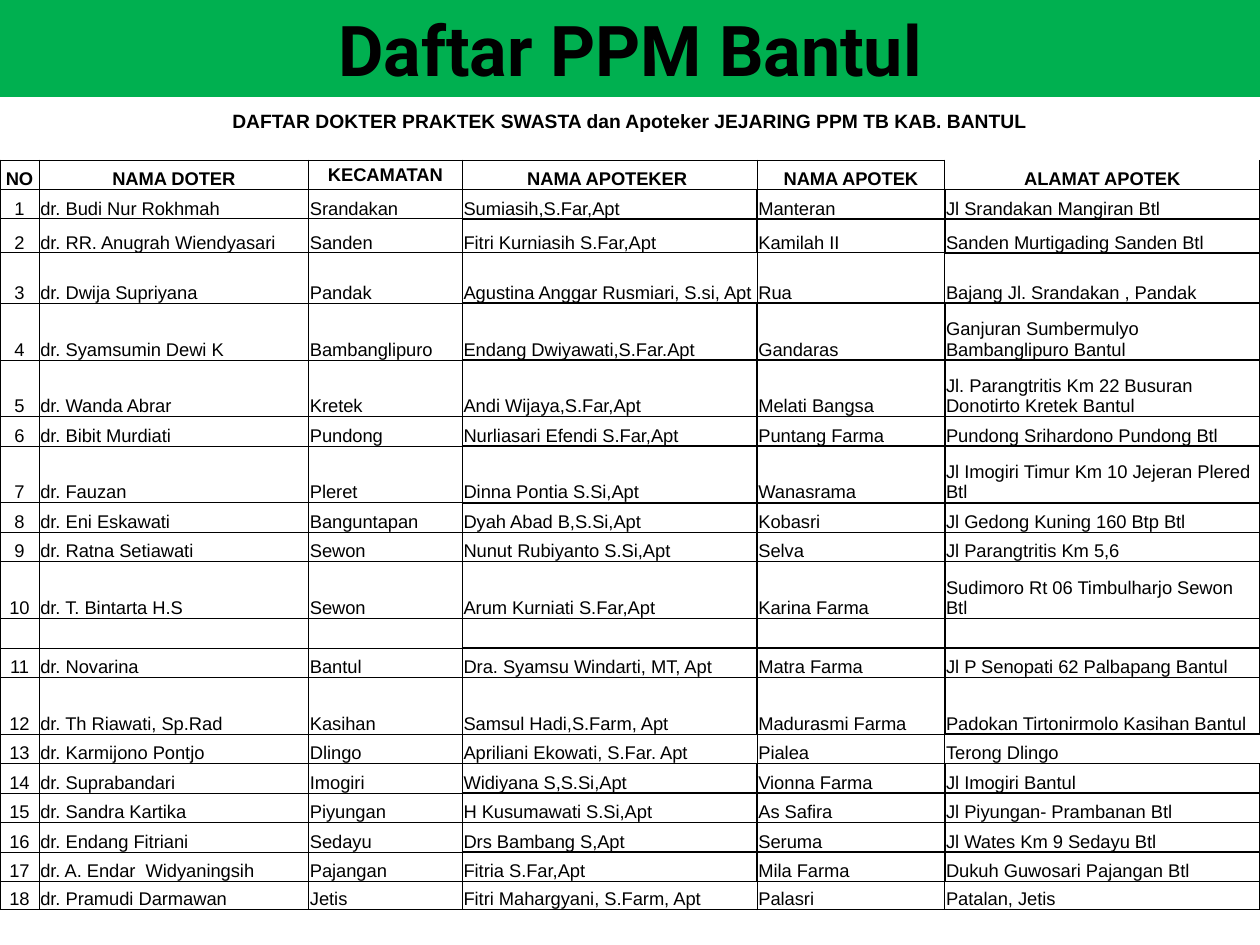
from lxml import etree
from pptx import Presentation
from pptx import util as u
from pptx.dml.color import RGBColor
from pptx.enum import shapes, text
from pptx.oxml.ns import qn

GREEN = RGBColor(0x00, 0xB0, 0x50)
BLACK = RGBColor(0x00, 0x00, 0x00)

SUBTITLE = "DAFTAR DOKTER PRAKTEK SWASTA dan Apoteker JEJARING PPM TB KAB. BANTUL"
HEADINGS = ["NO", "NAMA DOTER", "KECAMATAN", "NAMA APOTEKER ", "NAMA APOTEK", "ALAMAT APOTEK"]
DOCTORS = [
    ["1", "dr. Budi Nur Rokhmah", "Srandakan", "Sumiasih,S.Far,Apt", "Manteran",
     "Jl Srandakan Mangiran Btl"],
    ["2", "dr. RR. Anugrah Wiendyasari", "Sanden", "Fitri Kurniasih S.Far,Apt", "Kamilah II",
     "Sanden Murtigading Sanden Btl"],
    ["3", "dr. Dwija Supriyana", "Pandak", "Agustina Anggar Rusmiari, S.si, Apt", "Rua",
     "Bajang Jl. Srandakan , Pandak"],
    ["4", "dr. Syamsumin Dewi K", "Bambanglipuro", "Endang Dwiyawati,S.Far.Apt", "Gandaras",
     "Ganjuran Sumbermulyo Bambanglipuro Bantul"],
    ["5", "dr. Wanda Abrar", "Kretek", "Andi Wijaya,S.Far,Apt", "Melati Bangsa",
     "Jl. Parangtritis Km 22 Busuran Donotirto Kretek Bantul"],
    ["6", "dr. Bibit Murdiati", "Pundong", "Nurliasari Efendi S.Far,Apt", "Puntang Farma",
     "Pundong Srihardono Pundong Btl"],
    ["7", "dr. Fauzan", "Pleret", "Dinna Pontia S.Si,Apt", "Wanasrama",
     "Jl Imogiri Timur Km 10 Jejeran Plered Btl"],
    ["8", "dr. Eni Eskawati", "Banguntapan", "Dyah Abad B,S.Si,Apt", "Kobasri",
     "Jl Gedong Kuning 160 Btp Btl"],
    ["9", "dr. Ratna Setiawati", "Sewon", "Nunut Rubiyanto S.Si,Apt", "Selva",
     "Jl Parangtritis Km 5,6"],
    ["10", "dr. T. Bintarta H.S", "Sewon", "Arum Kurniati S.Far,Apt", "Karina Farma",
     "Sudimoro Rt 06 Timbulharjo Sewon Btl"],
    [""] * 6,
    ["11", "dr. Novarina", "Bantul", "Dra. Syamsu Windarti, MT, Apt", "Matra Farma",
     "Jl P Senopati 62 Palbapang Bantul"],
    ["12", "dr. Th Riawati, Sp.Rad", "Kasihan", "Samsul Hadi,S.Farm, Apt", "Madurasmi Farma",
     "Padokan Tirtonirmolo Kasihan Bantul"],
    ["13", "dr. Karmijono Pontjo", "Dlingo", "Apriliani Ekowati, S.Far. Apt", "Pialea",
     "Terong Dlingo"],
    ["14", "dr. Suprabandari", "Imogiri", "Widiyana S,S.Si,Apt", "Vionna Farma",
     "Jl Imogiri Bantul"],
    ["15", "dr. Sandra Kartika", "Piyungan", "H Kusumawati S.Si,Apt", "As Safira",
     "Jl Piyungan- Prambanan Btl"],
    ["16", "dr. Endang Fitriani", "Sedayu", "Drs Bambang S,Apt", "Seruma",
     "Jl Wates Km 9 Sedayu Btl"],
    ["17", "dr. A. Endar  Widyaningsih", "Pajangan", "Fitria S.Far,Apt", "Mila Farma",
     "Dukuh Guwosari Pajangan Btl"],
    ["18", "dr. Pramudi Darmawan", "Jetis", "Fitri Mahargyani, S.Farm, Apt", "Palasri",
     "Patalan, Jetis"],
]
ROWS = [[SUBTITLE] + [""] * 5, [""] * 6, HEADINGS] + DOCTORS
LAST_ROW, LAST_COLUMN = len(ROWS) - 1, len(HEADINGS) - 1

COLUMN_WIDTHS = [0.31, 2.14, 1.22, 2.34, 1.49, 2.5]
TABLE_HEIGHT = 6.39
SPECIAL_HEIGHTS = {0: 0.22, 1: 0.22, 4: 0.27, 5: 0.4, LAST_ROW: 0.22,
                   **dict.fromkeys([6, 7, 9, 12, 15], 0.45)}
ROW_HEIGHT = (TABLE_HEIGHT - sum(SPECIAL_HEIGHTS.values())) / (len(ROWS) - len(SPECIAL_HEIGHTS))

THIN, THICK = 0.5, 1
THIN_ROWS = {2, 5, 16, LAST_ROW}


def edge_widths(row, column):
    """Widths in points of the right and bottom edges of a cell."""
    if row < 2:
        return 0, THIN if row == 1 and column < LAST_COLUMN else 0
    right = THIN if column < 2 or row in THIN_ROWS else THICK
    if (row, column) == (16, LAST_COLUMN):
        right = 0
    bottom = THICK
    if column < 3 or row in (20, LAST_ROW) or (row in (4, 15) and column < LAST_COLUMN):
        bottom = THIN
    return right, bottom


def add_border(cell, tag, width):
    line = etree.SubElement(cell._tc.get_or_add_tcPr(), qn(tag), w=str(int(u.Pt(width))))
    if width:
        fill = etree.SubElement(line, qn("a:solidFill"))
        etree.SubElement(fill, qn("a:srgbClr"), val=str(BLACK))
    else:
        etree.SubElement(line, qn("a:noFill"))


deck = Presentation()
deck.slide_width, deck.slide_height = u.Inches(10), u.Inches(7.5)
page = deck.slides.add_slide(deck.slide_layouts[6])

# Table of doctors and pharmacies
frame = page.shapes.add_table(len(ROWS), len(HEADINGS), u.Inches(0), u.Inches(0.83),
                              u.Inches(10), u.Inches(TABLE_HEIGHT))
table = frame.table
table.first_row = table.horz_banding = False
for column, width in enumerate(COLUMN_WIDTHS):
    table.columns[column].width = u.Inches(width)
table.cell(0, 0).merge(table.cell(0, LAST_COLUMN))

for row, values in enumerate(ROWS):
    table.rows[row].height = u.Inches(SPECIAL_HEIGHTS.get(row, ROW_HEIGHT))
    for column, value in enumerate(values):
        cell = table.cell(row, column)

        # Borders agree with those of the neighbours to the left and above
        right, bottom = edge_widths(row, column)
        left = edge_widths(row, column - 1)[0] if column else (THIN if row >= 2 else 0)
        top = edge_widths(row - 1, column)[1] if row else 0
        for tag, width in zip(("a:lnL", "a:lnR", "a:lnT", "a:lnB"), (left, right, top, bottom)):
            add_border(cell, tag, width)
        cell.fill.background()

        # Text
        cell.margin_left = cell.margin_right = cell.margin_top = u.Inches(0.01)
        cell.margin_bottom = u.Inches(0)
        middle = value == "KECAMATAN"
        cell.vertical_anchor = text.MSO_ANCHOR.MIDDLE if middle else text.MSO_ANCHOR.BOTTOM
        para = cell.text_frame.paragraphs[0]
        if not value:
            etree.SubElement(para._p, qn("a:endParaRPr"), sz="1050")
            continue
        para.text = value
        centred = row <= 2 or column == 0
        para.alignment = text.PP_ALIGN.CENTER if centred else text.PP_ALIGN.LEFT
        font = para.runs[0].font
        font.name, font.size = "Arial", u.Pt(10.5 if row else 11)
        font.bold = row <= 2
        font.color.rgb = BLACK

# Title band
band = page.shapes.add_shape(shapes.MSO_SHAPE.RECTANGLE, u.Inches(0), u.Inches(0),
                             u.Inches(10), u.Inches(0.77))
band.shadow.inherit = False
band.fill.solid()
band.fill.fore_color.rgb = GREEN
band.line.fill.background()
band.text_frame.word_wrap = True
band.text_frame.auto_size = text.MSO_AUTO_SIZE.SHAPE_TO_FIT_TEXT
band.text_frame.vertical_anchor = text.MSO_ANCHOR.MIDDLE
para = band.text_frame.paragraphs[0]
para.text = "Daftar PPM Bantul"
para.alignment = text.PP_ALIGN.CENTER
font = para.runs[0].font
font.name, font.size, font.bold = "Roboto", u.Pt(40), True
font.color.rgb = BLACK

deck.save("out.pptx")
